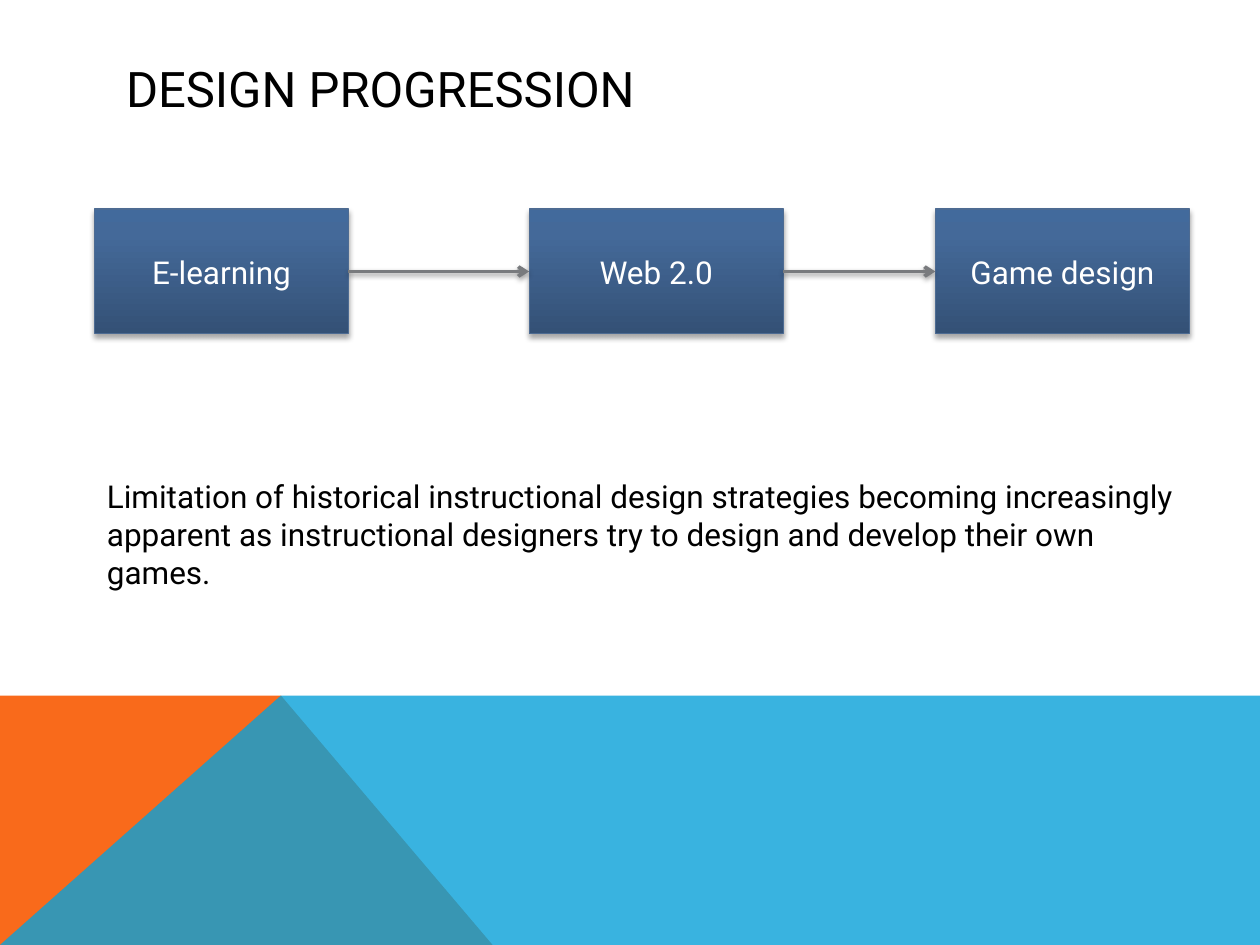
import pptx
import pptx.util
import pptx.dml.color
import pptx.enum.shapes
import pptx.enum.text
import pptx.oxml
import pptx.oxml.ns
from dataclasses import dataclass

Inches, Pt = pptx.util.Inches, pptx.util.Pt
PP_ALIGN = pptx.enum.text.PP_ALIGN
ANCHOR = pptx.enum.text.MSO_ANCHOR
W, H = 10, 7.5


@dataclass(frozen=True)
class Theme:
    font: str = "Roboto"
    title_size: int = 28
    text_size: int = 18
    text: str = "000000"
    box_text: str = "FFFFFF"
    box_line: str = "4D6B92"
    box_stops: tuple = ((0, "345176"), (80, "446999"), (100, "426A9C"))
    arrow: str = "797B7E"
    orange: str = "F96A1B"
    blue: str = "08A1D9"


THEME = Theme()


def rgb(value):
    return pptx.dml.color.RGBColor.from_string(value)


def xml(tag, attrs="", inner=""):
    ns = pptx.oxml.ns.nsdecls("a")
    return pptx.oxml.parse_xml(f"<a:{tag} {ns} {attrs}>{inner}</a:{tag}>")


def write(shape, text, size=THEME.text_size, color=THEME.text,
          align=PP_ALIGN.LEFT, anchor=ANCHOR.TOP):
    tf = shape.text_frame
    tf.word_wrap = True
    tf.vertical_anchor = anchor
    p = tf.paragraphs[0]
    p.alignment = align
    r = p.add_run()
    r.text = text
    r.font.name = THEME.font
    r.font.size = Pt(size)
    r.font.color.rgb = rgb(color)


def add_shadow(shape, dist, alpha):
    color = f'<a:srgbClr val="000000"><a:alpha val="{alpha * 1000}"/></a:srgbClr>'
    attrs = (f'blurRad="{Pt(3.1)}" dist="{Pt(dist)}" dir="5400000" '
             'rotWithShape="0"')
    shape.element.spPr.append(
        xml("effectLst", inner=f"<a:outerShdw {attrs}>{color}</a:outerShdw>"))


def add_polygon(s, box, points, color, opacity=100):
    x, y, w, h = box
    dots = [(Inches(x + w * px), Inches(y + h * py)) for px, py in points]
    builder = s.shapes.build_freeform(*dots[0])
    builder.add_line_segments(dots[1:], close=True)
    sp = builder.convert_to_shape()
    sp.shadow.inherit = False
    sp.line.fill.background()
    sp.fill.solid()
    sp.fill.fore_color.rgb = rgb(color)
    if opacity < 100:
        clr = sp.element.spPr.find(".//" + pptx.oxml.ns.qn("a:srgbClr"))
        clr.append(xml("alpha", f'val="{opacity * 1000}"'))


def add_footer_art(s, box):
    peak = (0.223, 0)
    add_polygon(s, box, [(0, 1), (0, 0), peak, (0.391, 1)], THEME.orange)
    add_polygon(s, box, [(0, 1), peak, (1, 0), (1, 1)], THEME.blue, opacity=80)


def add_title(s, box, text):
    title = s.shapes.title
    title.left, title.top, title.width, title.height = map(Inches, box)
    write(title, text, size=THEME.title_size, anchor=ANCHOR.MIDDLE)


def add_step(s, box, text):
    sp = s.shapes.add_shape(pptx.enum.shapes.MSO_SHAPE.RECTANGLE,
                            *map(Inches, box))
    stops = "".join(f'<a:gs pos="{pos * 1000}"><a:srgbClr val="{c}"/></a:gs>'
                    for pos, c in THEME.box_stops)
    sp.fill.gradient()
    spPr = sp.element.spPr
    spPr.replace(spPr.find(pptx.oxml.ns.qn("a:gradFill")),
                 xml("gradFill", 'rotWithShape="1"',
                     f'<a:gsLst>{stops}</a:gsLst>'
                     '<a:lin ang="16200000" scaled="0"/>'))
    sp.line.color.rgb = rgb(THEME.box_line)
    sp.line.width = Pt(0.75)
    add_shadow(sp, dist=1.8, alpha=35)
    write(sp, text, color=THEME.box_text, align=PP_ALIGN.CENTER,
          anchor=ANCHOR.MIDDLE)
    return sp


def add_arrow(s, source, target):
    line = s.shapes.add_connector(pptx.enum.shapes.MSO_CONNECTOR.STRAIGHT,
                                  0, 0, 0, 0)
    line.begin_connect(source, 3)
    line.end_connect(target, 1)
    line.line.color.rgb = rgb(THEME.arrow)
    line.line.width = Pt(2)
    line.line._get_or_add_ln().append(xml("tailEnd", 'type="arrow"'))
    add_shadow(line, dist=1.6, alpha=38)


def add_flow(s, box, steps):
    x, y, w, h = box
    step_w = w * 0.232
    boxes = [add_step(s, (x + w * share, y, step_w, h), text)
             for share, text in steps]
    for source, target in zip(boxes, boxes[1:]):
        add_arrow(s, source, target)


def add_statement(s, box, text):
    sp = s.shapes.add_textbox(*map(Inches, box))
    write(sp, text)
    sp.text_frame.auto_size = pptx.enum.text.MSO_AUTO_SIZE.SHAPE_TO_FIT_TEXT


def main():
    prs = pptx.Presentation()
    prs.slide_width, prs.slide_height = Inches(W), Inches(H)
    s = prs.slides.add_slide(prs.slide_layouts[5])
    left, width = W * 0.075, W * 0.869
    art_top = H * 0.736
    add_footer_art(s, (0, art_top, W, H - art_top))
    add_title(s, (W * 0.09, 0.4, W * 0.822, H * 0.08), "DESIGN PROGRESSION")
    add_flow(s, (left, 1.66, width, H * 0.132),
             [(0, "E-learning"), (0.397, "Web 2.0"), (0.768, "Game design")])
    add_statement(s, (left, 3.74, width, 0.71),
                  "Limitation of historical instructional design strategies "
                  "becoming increasingly apparent as instructional designers "
                  "try to design and develop their own games.")
    prs.save("out.pptx")


if __name__ == "__main__":
    main()
